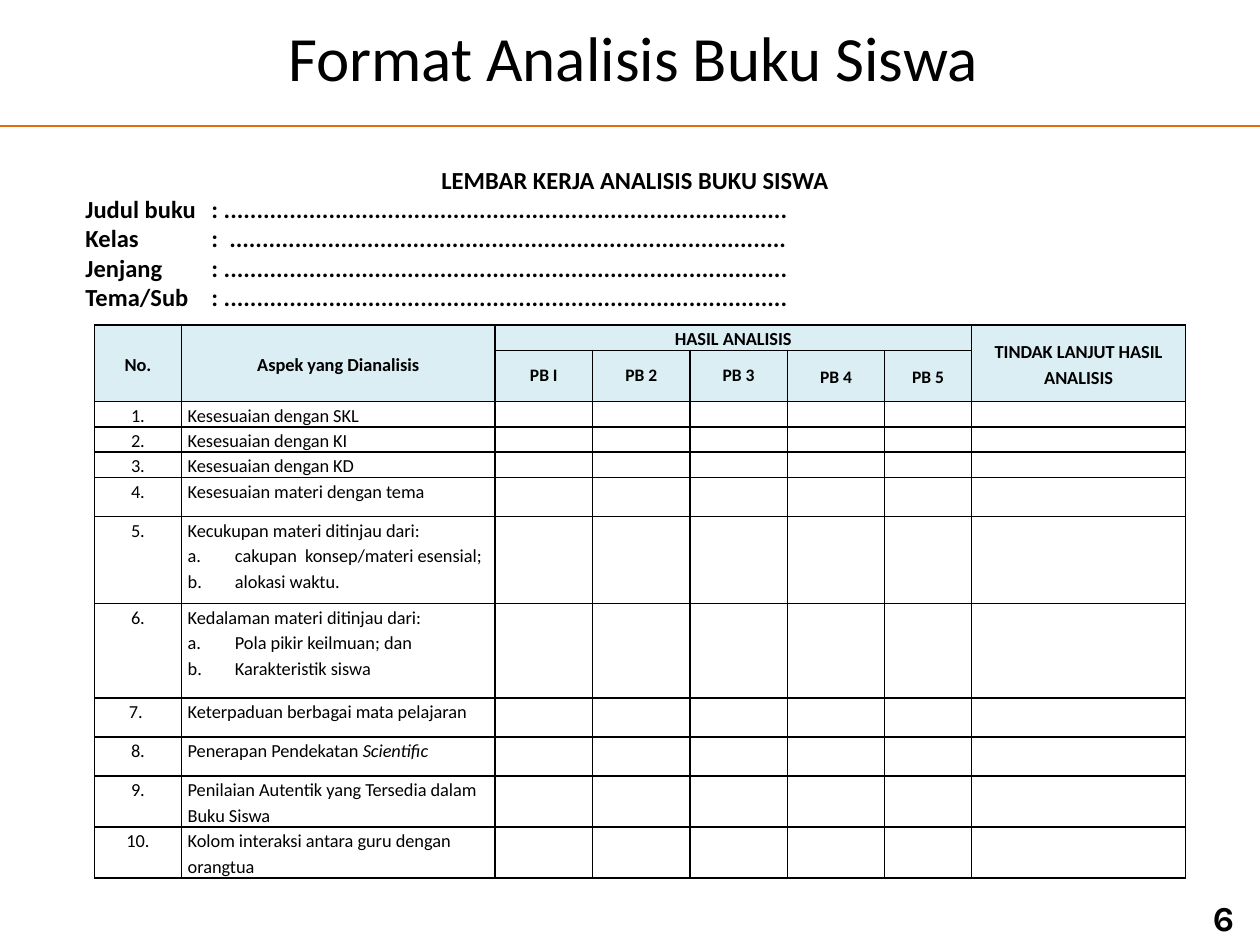
import pptx
import pptx.dml.color
import pptx.enum.shapes
import pptx.enum.text
import pptx.oxml.ns
import pptx.util
from lxml import etree

ALIGN = pptx.enum.text.PP_ALIGN
MIDDLE = pptx.enum.text.MSO_ANCHOR.MIDDLE
TOP = pptx.enum.text.MSO_ANCHOR.TOP


def color(hex_string):
    return pptx.dml.color.RGBColor.from_string(hex_string)


def set_values(target, values):
    for name, value in values.items():
        setattr(target, name, value)


def add_element(parent, tag, **attributes):
    return etree.SubElement(parent, pptx.oxml.ns.qn(tag), attributes)


class SlideBuilder:
    """Holds the style and the slide; lengths are cells of a 100 x 75 grid."""

    COLUMNS, ROWS = 100, 75
    BLACK, ACCENT, HEADER = "000000", "E46C0A", "DAEEF3"
    FONT, NUMBER_FONT = "Calibri", "Karla"

    def __init__(self, presentation):
        self.cell_width = presentation.slide_width / self.COLUMNS
        self.cell_height = presentation.slide_height / self.ROWS
        self.slide = presentation.slides.add_slide(presentation.slide_layouts[6])

    def x(self, columns):
        return pptx.util.Emu(round(columns * self.cell_width))

    def y(self, rows):
        return pptx.util.Emu(round(rows * self.cell_height))

    def area(self, left, top, width, height):
        return self.x(left), self.y(top), self.x(width), self.y(height)

    def text_run(self, paragraph, text, size, font=FONT, **values):
        run = paragraph.add_run()
        run.text = text
        set_values(run.font, {"size": pptx.util.Pt(size), "name": font, **values})
        run.font.color.rgb = color(self.BLACK)

    def line(self, left, top, right, bottom, width):
        connector = self.slide.shapes.add_connector(
            pptx.enum.shapes.MSO_CONNECTOR.STRAIGHT,
            self.x(left), self.y(top), self.x(right), self.y(bottom))
        connector.line.color.rgb = color(self.ACCENT)
        connector.line.width = pptx.util.Pt(width)
        add_element(connector.element.spPr, "a:effectLst")

    def text(self, box, lines, size, tab=None, **values):
        """Each line is a pair of text and alignment."""
        frame = self.slide.shapes.add_textbox(*self.area(*box)).text_frame
        set_values(frame, {"word_wrap": True, "vertical_anchor": MIDDLE})
        for index, (content, alignment) in enumerate(lines):
            paragraph = frame.add_paragraph() if index else frame.paragraphs[0]
            paragraph.alignment = alignment
            if tab:
                tabs = add_element(paragraph._p.get_or_add_pPr(), "a:tabLst")
                add_element(tabs, "a:tab", pos=str(self.x(tab)), algn="l")
            self.text_run(paragraph, content, size, **values)

    def table(self, left, top, widths, heights):
        box = self.area(left, top, sum(widths), sum(heights))
        table = self.slide.shapes.add_table(len(heights), len(widths), *box).table
        set_values(table, {"first_row": False, "horz_banding": False})
        for column, width in zip(table.columns, widths):
            column.width = self.x(width)
        for row, height in zip(table.rows, heights):
            row.height = self.y(height)
        for cell in table.iter_cells():
            self.style_cell(cell)
        return table

    def style_cell(self, cell):
        set_values(cell, {"margin_left": self.x(0.5), "margin_right": self.x(0.5),
                          "margin_top": 0, "margin_bottom": 0,
                          "vertical_anchor": TOP})
        properties = cell._tc.get_or_add_tcPr()
        for side in ("a:lnL", "a:lnR", "a:lnT", "a:lnB"):
            border = add_element(properties, side, w=str(pptx.util.Pt(1)))
            fill = add_element(border, "a:solidFill")
            add_element(fill, "a:srgbClr", val=self.BLACK)
        cell.fill.background()
        # Small text size keeps empty rows low
        add_element(cell.text_frame.paragraphs[0]._p, "a:endParaRPr", sz="1000")

    def header_cell(self, cell, text, size=10.5, spacing=1.15):
        cell.vertical_anchor = MIDDLE
        cell.fill.solid()
        cell.fill.fore_color.rgb = color(self.HEADER)
        paragraph = cell.text_frame.paragraphs[0]
        set_values(paragraph, {"alignment": ALIGN.CENTER, "line_spacing": spacing})
        self.text_run(paragraph, text, size, bold=True)

    def body_cell(self, cell, text, alignment=ALIGN.LEFT, items=(), italic_end=""):
        frame = cell.text_frame
        for index, content in enumerate((text, *items)):
            paragraph = frame.add_paragraph() if index else frame.paragraphs[0]
            set_values(paragraph, {"alignment": alignment, "line_spacing": 1.15})
            if index:
                properties = paragraph._p.get_or_add_pPr()
                properties.set("marL", str(self.x(3.75)))
                properties.set("indent", str(-self.x(3.75)))
                add_element(properties, "a:buFont", typeface="+mj-lt")
                add_element(properties, "a:buAutoNum", type="alphaLcPeriod")
            self.text_run(paragraph, content, 10.5)
        if italic_end:
            self.text_run(frame.paragraphs[0], italic_end, 10.5, italic=True)


ASPECTS = [
    ("1.", "Kesesuaian dengan SKL", {}),
    ("2.", "Kesesuaian dengan KI", {}),
    ("3.", "Kesesuaian dengan KD", {}),
    ("4.", "Kesesuaian materi dengan tema", {}),
    ("5.", "Kecukupan materi ditinjau dari:",
     {"items": ("cakupan  konsep/materi esensial;", "alokasi waktu.")}),
    ("6.", "Kedalaman materi ditinjau dari:",
     {"items": ("Pola pikir keilmuan; dan", "Karakteristik siswa")}),
    ("7. ", "Keterpaduan berbagai mata pelajaran", {}),
    ("8.", "Penerapan Pendekatan ", {"italic_end": "Scientific"}),
    ("9.", "Penilaian Autentik yang Tersedia dalam Buku Siswa", {}),
    ("10.", "Kolom interaksi antara guru dengan orangtua", {}),
]


def main():
    presentation = pptx.Presentation()
    presentation.slide_width = pptx.util.Inches(10)
    presentation.slide_height = pptx.util.Inches(7.5)
    builder = SlideBuilder(presentation)

    # Title, rule and slide number
    builder.line(0, 10, 100, 10, 1.5)
    builder.text((8.3, 1.1, 83.9, 6.7),
                 [("Format Analisis Buku Siswa", ALIGN.CENTER)], 36)
    builder.text((93, 70.8, 8.2, 4), [("6", ALIGN.CENTER)], 20,
                 font=builder.NUMBER_FONT, bold=True)

    # Worksheet heading with the fields to fill in
    fields = [("Judul buku", ": ", 86), ("Kelas", ":  ", 85),
              ("Jenjang", ": ", 86), ("Tema/Sub", ": ", 86)]
    lines = [("LEMBAR KERJA ANALISIS BUKU SISWA", ALIGN.CENTER)]
    lines += [(f"{label}\t{colon}{'.' * dots}", ALIGN.LEFT)
              for label, colon, dots in fields]
    builder.text((5.8, 12.5, 89.2, 12.8), lines, 14, tab=10, bold=True)

    # Analysis table
    widths = [6.9, 24.9] + [7.73] * 4 + [6.9, 17]
    heights = [2, 4.05, 2, 2, 2, 3.1, 6.9, 7.5, 3.1, 3.1, 4.05, 4.05]
    table = builder.table(7.5, 25.8, widths, heights)

    # Header rows
    for column, text in ((0, "No."), (1, "Aspek yang Dianalisis"),
                         (7, "TINDAK LANJUT HASIL ANALISIS")):
        table.cell(0, column).merge(table.cell(1, column))
        builder.header_cell(table.cell(0, column), text)
    table.cell(0, 2).merge(table.cell(0, 6))
    builder.header_cell(table.cell(0, 2), "HASIL ANALISIS")
    for column, number in enumerate(("I", "2", "3", "4", "5"), start=2):
        builder.header_cell(table.cell(1, column), f"PB {number}", size=10,
                            spacing=1.0 if column < 5 else 1.15)

    # Aspect rows
    for row, (number, aspect, extras) in enumerate(ASPECTS, start=2):
        builder.body_cell(table.cell(row, 0), number, ALIGN.CENTER)
        builder.body_cell(table.cell(row, 1), aspect, **extras)

    presentation.save("out.pptx")


if __name__ == "__main__":
    main()
